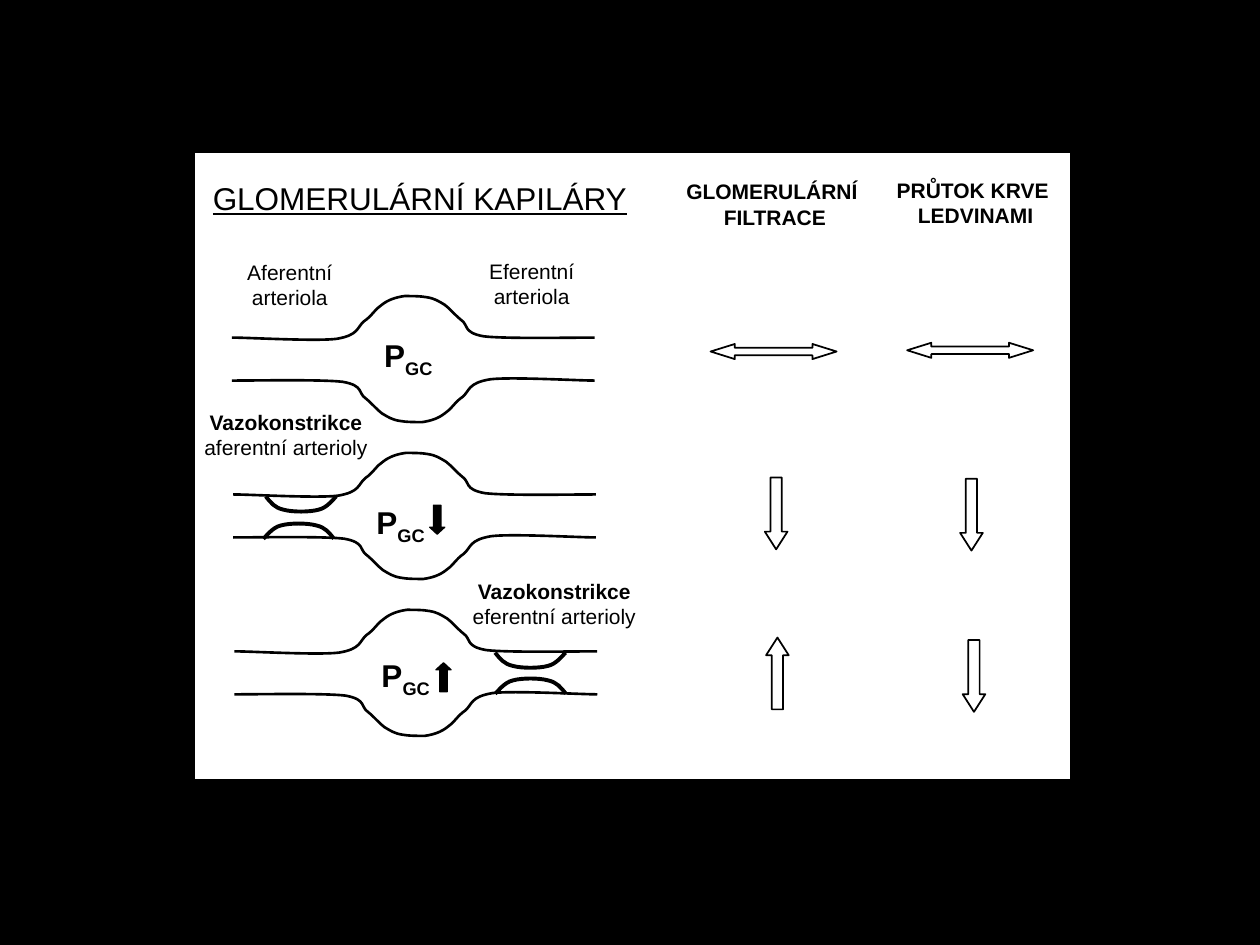
from dataclasses import dataclass

from lxml import etree
from pptx import Presentation
from pptx.dml.color import RGBColor
from pptx.enum.shapes import MSO_SHAPE
from pptx.enum.text import PP_ALIGN
from pptx.oxml.ns import qn
from pptx.util import Emu, Inches, Pt

BLACK = RGBColor(0x00, 0x00, 0x00)
WHITE = RGBColor(0xFF, 0xFF, 0xFF)
RECT = MSO_SHAPE.RECTANGLE
DOWN = MSO_SHAPE.DOWN_ARROW
BOTH = MSO_SHAPE.LEFT_RIGHT_ARROW
LEFT, CENTER = PP_ALIGN.LEFT, PP_ALIGN.CENTER
FONT = "Arial"

COLUMNS, ROWS = 100, 75
WIDTH, HEIGHT = Inches(10), Inches(7.5)

Point = tuple[float, float]

WALL: list[Point] = [
    (0, 3.3), (1.3, 3.3), (6.6, 3.6), (8.3, 3.4), (10.1, 3.1), (9.9, 2.5), (10.5, 2.0),
    (11.1, 1.6), (11.4, 1.0), (11.9, 0.7), (12.4, 0.3), (13.0, 0.1), (13.7, 0),
    (14.3, 0), (15.0, 0), (15.5, 0.1), (16.1, 0.2), (16.4, 0.4), (16.9, 0.7),
    (17.3, 1.0), (17.7, 1.5), (18.2, 1.9), (18.8, 2.3), (18.3, 2.9), (20.0, 3.2),
    (21.7, 3.4), (26.9, 3.3), (28.8, 3.3),
]
PINCH: list[Point] = [
    (0, 0), (0.4, 0.5), (0.7, 0.9), (1.4, 1.05), (2.1, 1.25), (3.5, 1.25), (4.2, 1.05),
    (4.9, 0.9), (5.4, 0.15), (5.6, 0),
]


@dataclass(frozen=True)
class Run:
    text: str
    bold: bool = False
    underline: bool = False
    subscript: bool = False


@dataclass(frozen=True)
class Label:
    col: float
    row: float
    cols: float
    rows: float
    lines: list[list[Run]]
    size: int = 12
    align: PP_ALIGN = CENTER
    filled: bool = False


@dataclass(frozen=True)
class Arrow:
    kind: MSO_SHAPE
    col: float
    row: float
    cols: float
    rows: float
    head: float
    fill: RGBColor = WHITE
    line: float = 1
    rotation: int = 0


@dataclass(frozen=True)
class Curve:
    points: list[Point]
    col: float
    row: float
    line: float
    rotation: int = 0


def x(col: float) -> Emu:
    """Return the length of a number of grid columns."""
    return Emu(round(WIDTH * col / COLUMNS))


def y(row: float) -> Emu:
    """Return the length of a number of grid rows."""
    return Emu(round(HEIGHT * row / ROWS))


def pressure(col: float, row: float, cols: float, text: str) -> Label:
    """Describe a label for the glomerular capillary pressure."""
    runs = [Run(text, bold=True), Run("GC", bold=True, subscript=True)]
    return Label(col, row, cols, 3.8, [runs], 18, LEFT, True)


def constriction(col: float, row: float, vessel: str) -> Label:
    """Describe a label for a constricted vessel."""
    return Label(col, row, 17, 4.7, [[Run("Vazokonstrikce", bold=True)], [Run(vessel)]])


def vertical(col: float, row: float, rotation: int = 0) -> Arrow:
    """Describe a large outlined vertical arrow."""
    return Arrow(DOWN, col, row, 1.8, 5.7, 0.78, rotation=rotation)


def small(col: float, row: float, rotation: int = 0) -> Arrow:
    """Describe a small solid arrow beside a pressure label."""
    return Arrow(DOWN, col, row, 1.2, 2.3, 0.46, BLACK, 0.75, rotation)


VESSELS = [(18.4 + 0.1 * i, 23.5 + 12.45 * i) for i in range(3)]
WALLS = [
    curve
    for col, row in VESSELS
    for curve in (Curve(WALL, col, row, 1.5), Curve(WALL, col, row + 6.4, 1.5, 180))
]
PINCHES = [
    Curve(PINCH, 21.1, 39.4, 2.25),
    Curve(PINCH, 20.9, 41.5, 2.25, 180),
    Curve(PINCH, 39.3, 51.8, 2.25),
    Curve(PINCH, 39.3, 53.8, 2.25, 180),
]
PRESSURES = [
    pressure(29.5, 26.2, 6.2, "P"),
    pressure(28.2, 39.4, 7.7, " P"),
    pressure(28.6, 51.6, 7.2, " P"),
]
ARROWS = [
    small(34.1, 40.1),
    small(34.6, 52.6, 180),
    Arrow(BOTH, 56.4, 27.3, 10, 1.2, 1.6),
    Arrow(BOTH, 72, 27.2, 10, 1.2, 1.6),
    vertical(60.7, 37.9),
    vertical(76.2, 38),
    vertical(60.8, 50.6, 180),
    vertical(76.4, 50.8),
]
LABELS = [
    Label(15.9, 13.7, 37.5, 3.8, [[Run("GLOMERULÁRNÍ KAPILÁRY", underline=True)]],
          18, LEFT, True),
    Label(53.4, 13.7, 16.2, 6.2,
          [[Run("GLOMERULÁRNÍ ", bold=True)], [Run("FILTRACE", bold=True)]], filled=True),
    Label(68.8, 13.6, 16.8, 5,
          [[Run("PRŮTOK KRVE", bold=True)], [Run(" LEDVINAMI", bold=True)]]),
    Label(17.4, 20.1, 11.2, 6.2, [[Run("Aferentní arteriola")]]),
    Label(36.6, 20, 11.2, 6.2, [[Run("Eferentní arteriola")]]),
    constriction(14.2, 32, "aferentní arterioly"),
    constriction(35.5, 45.4, "eferentní arterioly"),
]


def draw_shape(s, item: Arrow):
    """Draw a preset shape with a fill and a black outline."""
    sp = s.shapes.add_shape(item.kind, x(item.col), y(item.row), x(item.cols), y(item.rows))
    sp.shadow.inherit = False
    sp.fill.solid()
    sp.fill.fore_color.rgb = item.fill
    sp.line.color.rgb = BLACK
    sp.line.width = Pt(item.line)
    sp.rotation = item.rotation
    return sp


def draw_arrow(s, arrow: Arrow) -> None:
    """Draw a block arrow with its head length."""
    sp = draw_shape(s, arrow)
    sp.adjustments[0] = 0.5
    sp.adjustments[1] = arrow.head


def draw_curve(s, curve: Curve) -> None:
    """Draw an open outline of cubic curves."""
    start, *rest = [(x(curve.col + px), y(curve.row + py)) for px, py in curve.points]
    builder = s.shapes.build_freeform(*start)
    builder.add_line_segments(rest, close=False)
    sp = builder.convert_to_shape()
    outline = next(sp._element.iter(qn("a:path")))
    steps = outline.findall(qn("a:lnTo"))
    for i in range(0, len(steps), 3):
        cubic = etree.SubElement(outline, qn("a:cubicBezTo"))
        for step in steps[i:i + 3]:
            cubic.append(step[0])
            outline.remove(step)
    sp.shadow.inherit = False
    sp.fill.background()
    sp.line.color.rgb = BLACK
    sp.line.width = Pt(curve.line)
    sp.rotation = curve.rotation


def draw_label(s, label: Label) -> None:
    """Draw a text box run by run."""
    sp = s.shapes.add_textbox(x(label.col), y(label.row), x(label.cols), y(label.rows))
    if label.filled:
        sp.fill.solid()
        sp.fill.fore_color.rgb = WHITE
    tf = sp.text_frame
    tf.word_wrap = True
    p = tf.paragraphs[0]
    p.alignment = label.align
    p.font.size = Pt(label.size)
    for i, line in enumerate(label.lines):
        if i:
            p.add_line_break()
        for run in line:
            r = p.add_run()
            r.text = run.text
            r.font.name = FONT
            r.font.size = Pt(label.size)
            r.font.color.rgb = BLACK
            r.font.bold = run.bold
            r.font.underline = run.underline
            if run.subscript:
                r._r.get_or_add_rPr().set("baseline", "-25000")


def main() -> None:
    """Build the slide and save it."""
    prs = Presentation()
    prs.slide_width, prs.slide_height = WIDTH, HEIGHT
    s = prs.slides.add_slide(prs.slide_layouts[6])
    s.background.fill.solid()
    s.background.fill.fore_color.rgb = BLACK
    draw_shape(s, Arrow(RECT, 15.4, 12, 69.6, 49.9, 0, line=1.5))
    for label in PRESSURES:
        draw_label(s, label)
    for curve in WALLS + PINCHES:
        draw_curve(s, curve)
    for arrow in ARROWS:
        draw_arrow(s, arrow)
    for label in LABELS:
        draw_label(s, label)
    prs.save("out.pptx")


if __name__ == "__main__":
    main()
